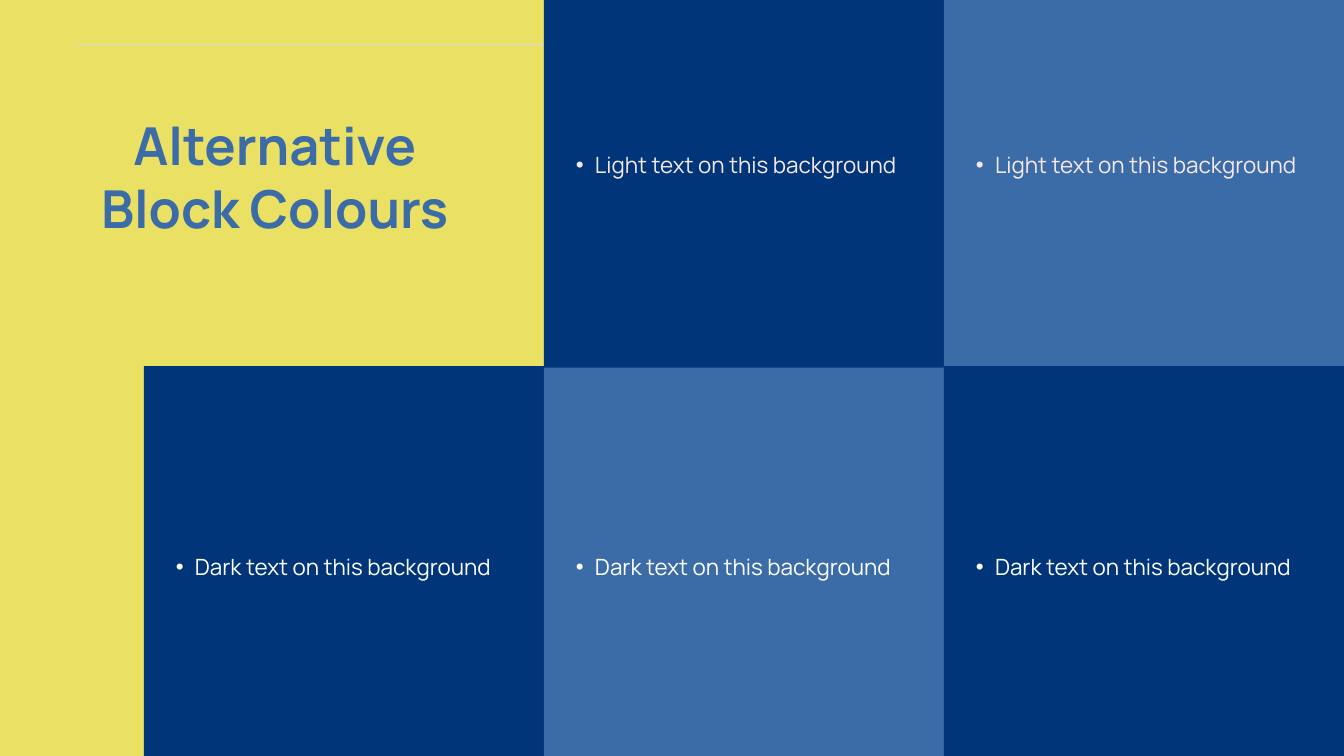
import copy

import pptx
import pptx.dml.color
import pptx.enum.shapes
import pptx.enum.text
import pptx.oxml.ns
import pptx.oxml.xmlchemy
import pptx.util

Pt = pptx.util.Pt
RGBColor = pptx.dml.color.RGBColor

YELLOW = RGBColor(0xEA, 0xE1, 0x64)
NAVY = RGBColor(0x00, 0x35, 0x7A)
BLUE = RGBColor(0x3C, 0x6C, 0xA8)
BLUSH = RGBColor(0xF6, 0xE9, 0xED)
WHITE = RGBColor(0xFF, 0xFF, 0xFF)
GREY = RGBColor(0xD9, 0xD9, 0xD9)

FONT = "Manrope"
PAGE_WIDTH, PAGE_HEIGHT = 1440, 810
TILE_WIDTH = 428.6
LIST_INSET = 13.7
LIST_WIDTH, LIST_HEIGHT = 401, 35.3
TITLE = "Alternative Block Colours"
LIGHT = "Light text on this background"
DARK = "Dark text on this background"

ROWS = [
    {"bottom": 405, "list_top": 152.6, "tiles": [
        (1, 0, NAVY, LIGHT, BLUSH),
        (2, 0, BLUE, LIGHT, BLUSH),
    ]},
    {"bottom": PAGE_HEIGHT, "list_top": 583.2, "tiles": [
        (0, 392.4, NAVY, DARK, WHITE),
        (1, 394, BLUE, DARK, WHITE),
        (2, 392.4, NAVY, DARK, WHITE),
    ]},
]


def add_list_placeholders(layout, count):
    body = layout.placeholders[1]
    for number in range(1, count):
        twin = copy.deepcopy(body.element)
        twin.xpath(".//p:ph")[0].set("idx", str(20 + number))
        twin.xpath(".//p:cNvPr")[0].set("id", str(20 + number))
        body.element.getparent().append(twin)


def write_text(box, text, *, at, size, color, spacing, bold=False,
               align=pptx.enum.text.PP_ALIGN.LEFT, bullet=None):
    box.left, box.top, box.width, box.height = map(Pt, at)
    box.element.getparent().append(box.element)
    frame = box.text_frame
    frame.word_wrap = True
    frame.auto_size = pptx.enum.text.MSO_AUTO_SIZE.NONE
    frame.vertical_anchor = pptx.enum.text.MSO_ANCHOR.TOP
    frame.margin_left = frame.margin_right = 0
    frame.margin_top = frame.margin_bottom = 0
    para = frame.paragraphs[0]
    para.alignment = align
    para.line_spacing = Pt(spacing)
    para.space_before = para.space_after = Pt(0)
    span = para.add_run()
    span.text = text
    span.font.name = FONT
    span.font.size = Pt(size)
    span.font.bold = bold
    span.font.color.rgb = color
    if bullet:
        properties = para._p.get_or_add_pPr()
        properties.set("marL", str(Pt(41)))
        properties.set("indent", str(Pt(-20.5)))
        mark = pptx.oxml.xmlchemy.OxmlElement("a:buChar")
        mark.set("char", bullet)
        properties.append(mark)


def add_rule(page):
    rule = page.shapes.add_connector(
        pptx.enum.shapes.MSO_CONNECTOR.STRAIGHT,
        Pt(80.6), Pt(47.5), Pt(PAGE_WIDTH - 80.6), Pt(47.5))
    rule.line.color.rgb = GREY
    rule.line.width = Pt(1.5)
    rule.element.spPr.append(pptx.oxml.xmlchemy.OxmlElement("a:effectLst"))


def add_tile(page, left, top, bottom, color):
    tile = page.shapes.add_shape(
        pptx.enum.shapes.MSO_SHAPE.RECTANGLE,
        Pt(left), Pt(top), Pt(TILE_WIDTH), Pt(bottom - top))
    tile.shadow.inherit = False
    tile.fill.solid()
    tile.fill.fore_color.rgb = color
    tile.line.fill.background()


def main():
    deck = pptx.Presentation()
    deck.slide_width, deck.slide_height = Pt(PAGE_WIDTH), Pt(PAGE_HEIGHT)
    layout = deck.slide_layouts[1]
    add_list_placeholders(layout, sum(len(row["tiles"]) for row in ROWS))
    page = deck.slides.add_slide(layout)
    page.background.fill.solid()
    page.background.fill.fore_color.rgb = YELLOW

    title, *lists = list(page.placeholders)
    add_rule(page)
    write_text(title, TITLE, at=(96.5, 121.7, 396, 135.4), size=56, color=BLUE,
               spacing=67.2, bold=True, align=pptx.enum.text.PP_ALIGN.CENTER)

    boxes = iter(lists)
    for row in ROWS:
        for column, top, fill, text, color in row["tiles"]:
            left = PAGE_WIDTH - (3 - column) * TILE_WIDTH
            add_tile(page, left, top, row["bottom"], fill)
            write_text(next(boxes), text, size=24, color=color, spacing=38.4, bullet="•",
                       at=(left + LIST_INSET, row["list_top"], LIST_WIDTH, LIST_HEIGHT))

    deck.save("out.pptx")


if __name__ == "__main__":
    main()
